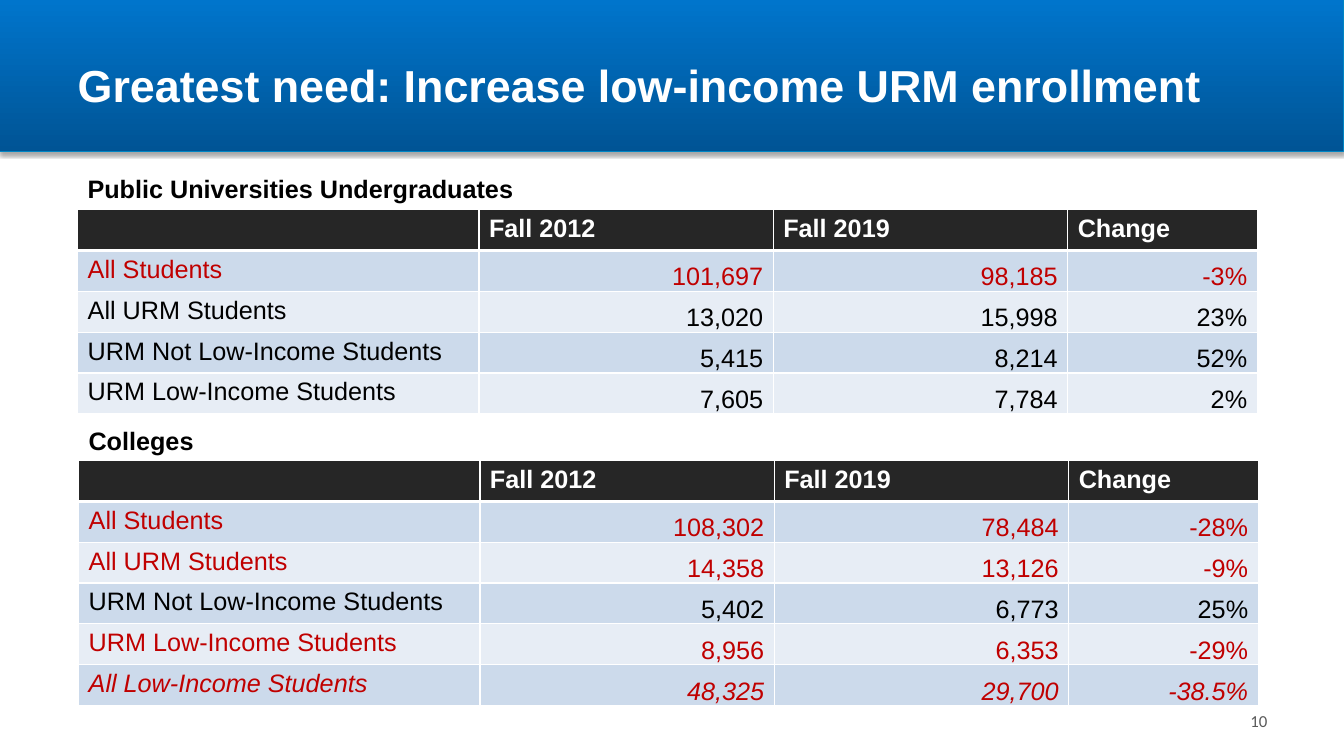
import pptx
import pptx.util
import pptx.dml.color
import pptx.enum.shapes
import pptx.enum.text
import pptx.oxml
import pptx.oxml.ns

Inches, Pt = pptx.util.Inches, pptx.util.Pt
ALIGN, ANCHOR = pptx.enum.text.PP_ALIGN, pptx.enum.text.MSO_ANCHOR

# Content
TITLE = "Greatest need: Increase low-income URM enrollment"
PAGE_NUMBER = "10"
HEADER = ["", "Fall 2012", "Fall 2019", "Change"]
SECTIONS = [
    {"heading": "Public Universities Undergraduates", "left": 0.77, "top": 1.67, "table_top": 2.08,
     "rows": [
         ["All Students", "101,697", "98,185", "-3%"],
         ["All URM Students", "13,020", "15,998", "23%"],
         ["URM Not Low-Income Students", "5,415", "8,214", "52%"],
         ["URM Low-Income Students", "7,605", "7,784", "2%"],
     ]},
    {"heading": "Colleges", "left": 0.78, "top": 4.17, "table_top": 4.57,
     "rows": [
         ["All Students", "108,302", "78,484", "-28%"],
         ["All URM Students", "14,358", "13,126", "-9%"],
         ["URM Not Low-Income Students", "5,402", "6,773", "25%"],
         ["URM Low-Income Students", "8,956", "6,353", "-29%"],
         ["All Low-Income Students", "48,325", "29,700", "-38.5%"],
     ]},
]
ITALIC_ROW = "All Low-Income Students"
COLUMN_WIDTHS = [3.98, 2.92, 2.92, 1.88]
ROW_HEIGHT = 0.405
COLORS = {
    "banner_bottom": "005495", "banner_top": "0075CC", "banner_line": "0085C3",
    "header": "262626", "odd_row": "CCDAEB", "even_row": "E7EDF5",
    "white": "FFFFFF", "black": "000000", "decline": "C00000", "number": "595959",
}


def color(name):
    return pptx.dml.color.RGBColor.from_string(COLORS[name])


def write(frame, text, size, ink, bold=False, italic=False, align=ALIGN.LEFT, font="Arial"):
    para = frame.paragraphs[0]
    para.alignment = align
    span = para.add_run()
    span.text = text
    span.font.name, span.font.size = font, Pt(size)
    span.font.bold, span.font.italic = bold, italic
    span.font.color.rgb = color(ink)


def add_label(page, left, top, width, height, text, size, ink, **style):
    box = page.shapes.add_textbox(Inches(left), Inches(top), Inches(width), Inches(height))
    box.text_frame.word_wrap = True
    box.text_frame.vertical_anchor = ANCHOR.MIDDLE
    write(box.text_frame, text, size, ink, **style)


def set_borders(cell, top, bottom):
    properties = cell._tc.get_or_add_tcPr()
    for place, (side, points) in enumerate([("L", 1), ("R", 1), ("T", top), ("B", bottom)]):
        properties.insert(place, pptx.oxml.parse_xml(
            f'<a:ln{side} {pptx.oxml.ns.nsdecls("a")} w="{Pt(points)}"><a:solidFill>'
            f'<a:srgbClr val="{COLORS["white"]}"/></a:solidFill></a:ln{side}>'))


def add_enrollment_table(page, left, top, rows):
    lines = [HEADER] + rows
    frame = page.shapes.add_table(len(lines), len(HEADER), Inches(left), Inches(top),
                                  Inches(sum(COLUMN_WIDTHS)), Inches(ROW_HEIGHT * len(lines)))
    table = frame.table
    for column, width in zip(table.columns, COLUMN_WIDTHS):
        column.width = Inches(width)
    for r, line in enumerate(lines):
        table.rows[r].height = Inches(ROW_HEIGHT)
        is_header = r == 0
        fill = "header" if is_header else "odd_row" if r % 2 else "even_row"
        # Rows with a falling count are red
        ink = "white" if is_header else "decline" if line[-1].startswith("-") else "black"
        for c, text in enumerate(line):
            cell = table.cell(r, c)
            cell.fill.solid()
            cell.fill.fore_color.rgb = color(fill)
            set_borders(cell, 3 if r == 1 else 1, 3 if is_header else 1)
            is_value = not is_header and c > 0
            if is_value:
                cell.vertical_anchor = ANCHOR.BOTTOM
                cell.margin_left = cell.margin_top = Inches(0.01)
                cell.margin_right, cell.margin_bottom = Inches(0.1), 0
            if text:
                write(cell.text_frame, text, 18, ink, bold=is_header, italic=line[0] == ITALIC_ROW,
                      align=ALIGN.RIGHT if is_value else ALIGN.LEFT)


def main():
    deck = pptx.Presentation()
    deck.slide_width, deck.slide_height = Inches(13.33), Inches(7.5)
    page = deck.slides.add_slide(deck.slide_layouts[5])

    # Banner behind the title
    banner = page.shapes.add_shape(pptx.enum.shapes.MSO_SHAPE.RECTANGLE, 0, 0,
                                   deck.slide_width, Inches(1.5))
    banner.fill.gradient()
    banner.fill.gradient_angle = 90
    for stop, name, position in zip(banner.fill.gradient_stops, ["banner_bottom", "banner_top"], [0, 1]):
        stop.color.rgb = color(name)
        stop.position = position
    banner.line.color.rgb = color("banner_line")
    banner.line.width = Pt(0.75)
    banner.shadow.inherit = False
    effects = banner.element.spPr.find(pptx.oxml.ns.qn("a:effectLst"))
    effects.append(pptx.oxml.parse_xml(
        f'<a:outerShdw {pptx.oxml.ns.nsdecls("a")} blurRad="{Pt(3.1)}" dist="{Pt(1.8)}" '
        f'dir="5400000" rotWithShape="0"><a:srgbClr val="{COLORS["black"]}">'
        '<a:alpha val="35000"/></a:srgbClr></a:outerShdw>'))

    # Title
    title = page.shapes.title
    title.element.addprevious(banner.element)
    title.left, title.top, title.width, title.height = map(Inches, (0.67, 0.17, 12, 1.33))
    title.text_frame.vertical_anchor = ANCHOR.MIDDLE
    write(title.text_frame, TITLE, 32, "white", bold=True)

    # Headed tables
    for section in SECTIONS:
        add_enrollment_table(page, section["left"], section["table_top"], section["rows"])
        add_label(page, section["left"], section["top"], 11.89, 0.4, section["heading"],
                  18, "black", bold=True)

    # Page number
    add_label(page, 12.11, 6.95, 0.56, 0.4, PAGE_NUMBER, 12, "number",
              align=ALIGN.RIGHT, font="Calibri")

    deck.save("out.pptx")


if __name__ == "__main__":
    main()
